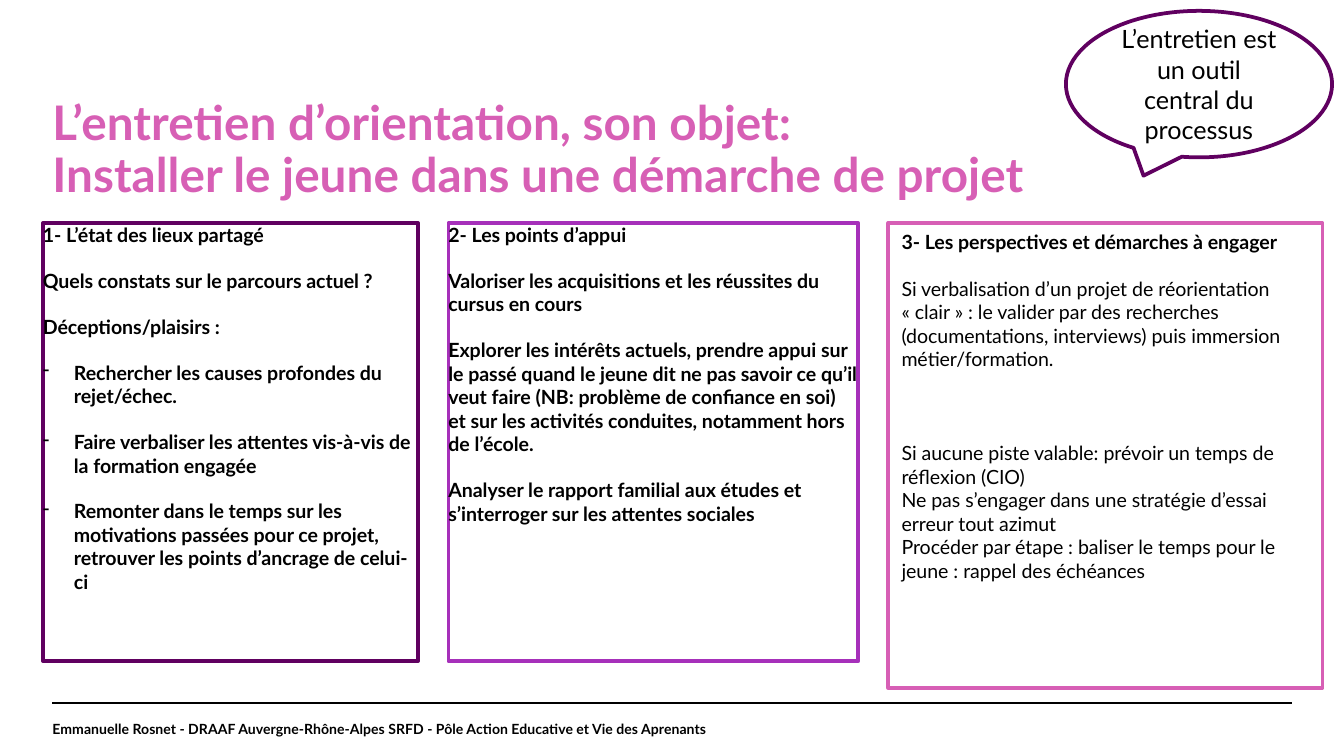
import pptx
import pptx.dml.color
import pptx.enum.shapes
import pptx.enum.text
import pptx.util
from dataclasses import dataclass
from lxml import etree

Pt = pptx.util.Pt
RGBColor = pptx.dml.color.RGBColor
MSO_SHAPE = pptx.enum.shapes.MSO_SHAPE
MSO_ANCHOR = pptx.enum.text.MSO_ANCHOR
PP_ALIGN = pptx.enum.text.PP_ALIGN


@dataclass(frozen=True)
class Theme:
    font: str = "Lato"
    ink: str = "000000"
    paper: str = "FFFFFF"
    plum: str = "600060"
    violet: str = "A630BA"
    pink: str = "D75FB5"
    title: float = 25.5
    callout: float = 13.5
    body: float = 10.5
    footer: float = 7.5
    outline: float = 2


THEME = Theme()
MARGIN = 28.1
COLUMN_TOP = 119.5
DASH_INDENT = 16.6
LINE = 12.6  # height of one line of body text

STATE_OF_PLAY = [
    "1- L’état des lieux partagé",
    "Quels constats sur le parcours actuel ?",
    "Déceptions/plaisirs :",
    "- Rechercher les causes profondes du rejet/échec.",
    "- Faire verbaliser les attentes vis-à-vis de la formation engagée",
    "- Remonter dans le temps sur les motivations passées pour ce projet, "
    "retrouver les points d’ancrage de celui-ci",
]
STRENGTHS = [
    "2- Les points d’appui",
    "Valoriser les acquisitions et les réussites du cursus en cours",
    "Explorer les intérêts actuels, prendre appui sur le passé quand le jeune "
    "dit ne pas savoir ce qu’il veut faire (NB: problème de confiance en soi) "
    "et sur les activités conduites, notamment hors de l’école.",
    "Analyser le rapport familial aux études et s’interroger sur les attentes sociales",
]
# Text, space before
PROSPECTS = [
    ("3- Les perspectives et démarches à engager", 0),
    ("Si verbalisation d’un projet de réorientation «\u00a0clair\u00a0» : le valider par "
     "des recherches (documentations, interviews) puis immersion métier/formation.", LINE),
    ("Si aucune piste valable: prévoir un temps de réflexion (CIO)", 3 * LINE),
    ("Ne pas s’engager dans une stratégie d’essai erreur tout azimut", 0),
    ("Procéder par étape : baliser le temps pour le jeune : rappel des échéances", 0),
]


def rgb(color):
    return RGBColor.from_string(color)


def style(paragraph, size, color=THEME.ink, bold=False):
    for run in paragraph.runs:
        run.font.name = THEME.font
        run.font.size = Pt(size)
        run.font.color.rgb = rgb(color)
        run.font.bold = bold


def remove_insets(frame):
    frame.margin_left = frame.margin_right = 0
    frame.margin_top = frame.margin_bottom = 0


def add_label(slide, box, text, size, color, anchor):
    frame = slide.shapes.add_textbox(*map(Pt, box)).text_frame
    frame.word_wrap = True
    frame.vertical_anchor = anchor
    remove_insets(frame)
    frame.text = text
    style(frame.paragraphs[0], size, color, bold=True)
    return frame.paragraphs[0]


def add_outlined(slide, kind, box, color, anchor):
    shape = slide.shapes.add_shape(kind, *map(Pt, box))
    shape.shadow.inherit = False
    shape.fill.solid()
    shape.fill.fore_color.rgb = rgb(THEME.paper)
    shape.line.color.rgb = rgb(color)
    shape.line.width = Pt(THEME.outline)
    frame = shape.text_frame
    frame.word_wrap = True
    frame.vertical_anchor = anchor
    return frame


def add_paragraphs(frame, texts):
    frame.text = "\n".join(texts)
    for paragraph in frame.paragraphs:
        paragraph.alignment = PP_ALIGN.LEFT
    return frame.paragraphs


def add_dash(paragraph):
    properties = paragraph._p.get_or_add_pPr()
    properties.set("marL", str(Pt(DASH_INDENT)))
    properties.set("indent", str(-Pt(DASH_INDENT)))
    bullet = etree.SubElement(properties, pptx.oxml.ns.qn("a:buChar"))
    bullet.set("char", "-")


def add_spaced_column(slide, left, width, color, texts):
    frame = add_outlined(slide, MSO_SHAPE.RECTANGLE, (left, COLUMN_TOP, width, 234.7),
                         color, MSO_ANCHOR.TOP)
    remove_insets(frame)
    paragraphs = add_paragraphs(frame, [text.removeprefix("- ") for text in texts])
    for index, (paragraph, text) in enumerate(zip(paragraphs, texts)):
        if text.startswith("- "):
            add_dash(paragraph)
        paragraph.space_before = Pt(4 if index else 0)
        paragraph.space_after = Pt(8)
        style(paragraph, THEME.body, bold=True)


def add_prospects_column(slide):
    frame = add_outlined(slide, MSO_SHAPE.RECTANGLE, (475.9, COLUMN_TOP, 232.6, 249.1),
                         THEME.pink, MSO_ANCHOR.TOP)
    paragraphs = add_paragraphs(frame, [text for text, _ in PROSPECTS])
    for index, (paragraph, (_, gap)) in enumerate(zip(paragraphs, PROSPECTS)):
        paragraph.space_before = Pt(gap)
        style(paragraph, THEME.body, bold=index == 0)


def add_callout(slide, text):
    frame = add_outlined(slide, MSO_SHAPE.OVAL_CALLOUT, (571, 5.8, 142.6, 78.5),
                         THEME.plum, MSO_ANCHOR.MIDDLE)
    frame.text = text
    frame.paragraphs[0].alignment = PP_ALIGN.CENTER
    style(frame.paragraphs[0], THEME.callout)


def add_rule(slide, left, right, y):
    rule = slide.shapes.add_connector(pptx.enum.shapes.MSO_CONNECTOR.STRAIGHT,
                                      Pt(left), Pt(y), Pt(right), Pt(y))
    rule.line.color.rgb = rgb(THEME.ink)
    rule.line.width = Pt(0.8)
    etree.SubElement(rule._element.spPr, pptx.oxml.ns.qn("a:effectLst"))


def main():
    deck = pptx.Presentation()
    deck.slide_width, deck.slide_height = Pt(720), Pt(405)
    slide = deck.slides.add_slide(deck.slide_layouts[6])

    # Footer rule and title
    add_rule(slide, MARGIN, 720 - MARGIN, 376.6)
    title = add_label(slide, (MARGIN, 53.3, 663.4, 79.2),
                      "L’entretien d’orientation, son objet:\v"
                      "Installer le jeune dans une démarche de projet",
                      THEME.title, THEME.pink, MSO_ANCHOR.TOP)
    title.line_spacing = 0.9

    # Three columns
    add_spaced_column(slide, 23, 200.9, THEME.plum, STATE_OF_PLAY)
    add_spaced_column(slide, 240.2, 219.6, THEME.violet, STRENGTHS)
    add_prospects_column(slide)

    # Callout and footer
    add_callout(slide, "L’entretien est un outil central du processus")
    add_label(slide, (MARGIN, 376.6, 465.1, 28.1),
              "Emmanuelle Rosnet - DRAAF Auvergne-Rhône-Alpes SRFD - "
              "Pôle Action Educative et Vie des Aprenants",
              THEME.footer, THEME.ink, MSO_ANCHOR.MIDDLE)

    deck.save("out.pptx")


if __name__ == "__main__":
    main()
